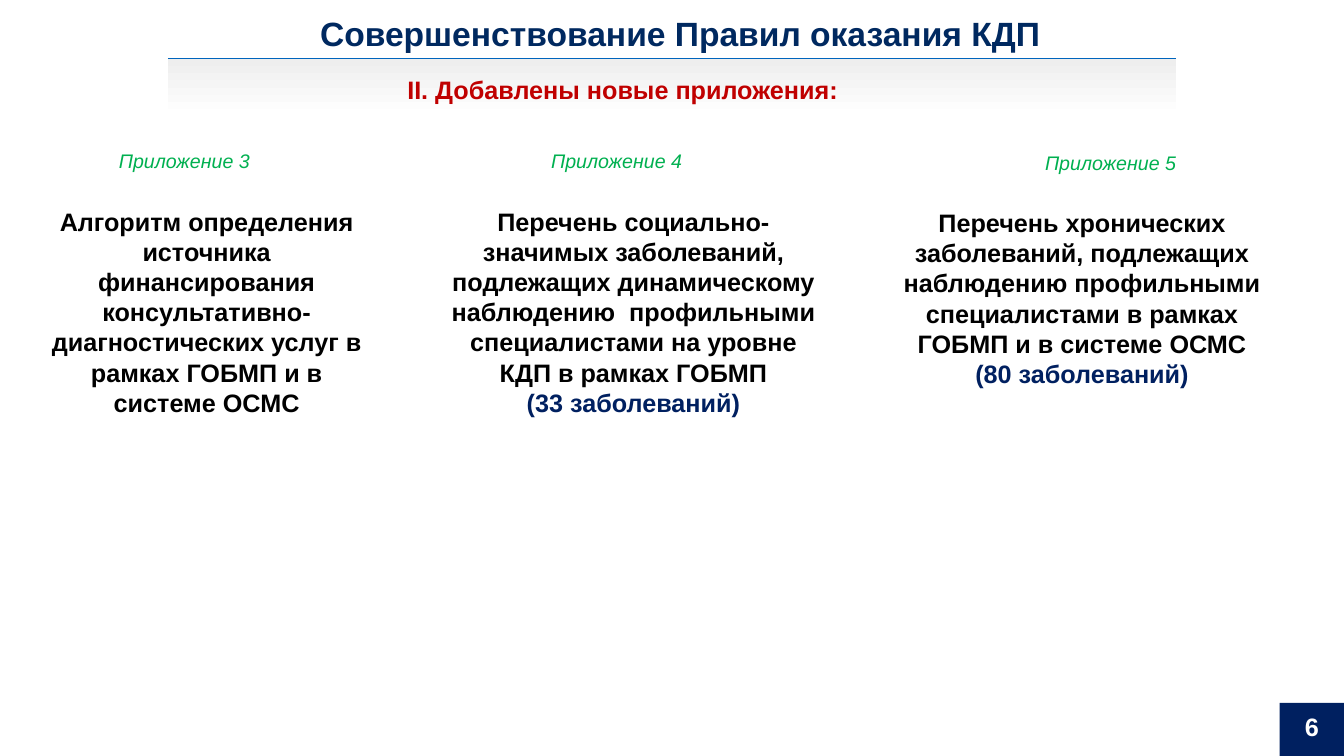
from lxml import etree
from pptx import Presentation
from pptx.dml.color import RGBColor
from pptx.enum.shapes import MSO_CONNECTOR, MSO_SHAPE
from pptx.enum.text import MSO_ANCHOR, MSO_AUTO_SIZE, PP_ALIGN
from pptx.oxml.ns import qn
from pptx.util import Pt

RECTANGLE = MSO_SHAPE.RECTANGLE
STRAIGHT = MSO_CONNECTOR.STRAIGHT
MIDDLE = MSO_ANCHOR.MIDDLE
GROW = MSO_AUTO_SIZE.SHAPE_TO_FIT_TEXT
LEFT = PP_ALIGN.LEFT
CENTER = PP_ALIGN.CENTER

FONT = "Arial"
TITLE_BLUE = RGBColor(0x00, 0x29, 0x60)
NAVY = RGBColor(0x00, 0x20, 0x60)
LINE_BLUE = RGBColor(0x00, 0x65, 0xBD)
RED = RGBColor(0xC0, 0x00, 0x00)
GREEN = RGBColor(0x00, 0xB0, 0x50)
BLACK = RGBColor(0x00, 0x00, 0x00)
WHITE = RGBColor(0xFF, 0xFF, 0xFF)
LIGHT_GRAY = RGBColor(0xEE, 0xEE, 0xEE)

SLIDE_WIDTH, SLIDE_HEIGHT = 960, 540
LABEL_HEIGHT = 24.2
BODY_OFFSET = 40.5
COLUMNS = [
    (24.5, 103, 246.2, 160, 53.3, "Приложение 3",
     "Алгоритм определения источника финансирования консультативно-диагностических "
     "услуг в рамках ГОБМП и в системе ОСМС", None),
    (309.6, 103, 285.8, 160, 77, "Приложение 4",
     "Перечень социально-значимых заболеваний, подлежащих динамическому наблюдению  "
     "профильными специалистами на уровне КДП в рамках ГОБМП", "(33 заболеваний)"),
    (630, 104, 285.8, 138.2, 109.4, "Приложение 5",
     "Перечень хронических заболеваний, подлежащих наблюдению профильными "
     "специалистами в рамках ГОБМП и в системе ОСМС", "(80 заболеваний)"),
]


def format_paragraph(paragraph, size, color, bold=True, italic=False, alignment=CENTER):
    paragraph.alignment = alignment
    for run in paragraph.runs:
        run.font.name = FONT
        run.font.size = Pt(size)
        run.font.bold = bold
        run.font.italic = italic
        run.font.color.rgb = color


def add_text(slide, left, top, width, height, text, size, color, **style):
    shape = slide.shapes.add_textbox(Pt(left), Pt(top), Pt(width), Pt(height))
    text_frame = shape.text_frame
    text_frame.word_wrap = True
    text_frame.auto_size = GROW
    text_frame.text = text
    format_paragraph(text_frame.paragraphs[0], size, color, **style)
    return text_frame


def add_rectangle(slide, left, top, width, height):
    shape = slide.shapes.add_shape(RECTANGLE, Pt(left), Pt(top), Pt(width), Pt(height))
    shape.shadow.inherit = False
    shape.line.fill.background()
    return shape


def add_header(slide, left, top, width, height):
    title = add_text(slide, left - 83.5, top - 32.4, 898.6, 28.8,
                     "Совершенствование Правил оказания КДП", 24, TITLE_BLUE)
    title.margin_left = title.margin_right = 0
    title.margin_top = title.margin_bottom = 0

    band = add_rectangle(slide, left, top, width, height)
    band.fill.gradient()
    band.fill.gradient_angle = 270
    for stop, color in zip(band.fill.gradient_stops, (LIGHT_GRAY, WHITE)):
        stop.color.rgb = color

    rule = slide.shapes.add_connector(STRAIGHT, Pt(left), Pt(top), Pt(left + width), Pt(top))
    rule.line.color.rgb = LINE_BLUE
    rule.line.width = Pt(0.75)
    etree.SubElement(rule._element.spPr, qn("a:effectLst"))

    add_text(slide, left + 131, top + 7.9, 387.4, 28.8,
             "II. Добавлены новые приложения:", 18, RED)


def add_appendix(slide, left, top, width, body_height, label_indent, label, body, count):
    add_text(slide, left + label_indent, top, 153.4, LABEL_HEIGHT, label, 14, GREEN,
             bold=False, italic=True, alignment=LEFT)
    text_frame = add_text(slide, left, top + BODY_OFFSET, width, body_height, body, 18, BLACK)
    if count:
        paragraph = text_frame.add_paragraph()
        paragraph.text = count
        format_paragraph(paragraph, 18, NAVY)


def add_page_number(slide, left, top, width, height):
    badge = add_rectangle(slide, left, top, width, height)
    badge.fill.solid()
    badge.fill.fore_color.rgb = NAVY
    badge.text_frame.vertical_anchor = MIDDLE
    badge.text_frame.text = "6"
    paragraph = badge.text_frame.paragraphs[0]
    paragraph.line_spacing = 0.8
    format_paragraph(paragraph, 18, WHITE)


def main():
    presentation = Presentation()
    presentation.slide_width = Pt(SLIDE_WIDTH)
    presentation.slide_height = Pt(SLIDE_HEIGHT)
    slide = presentation.slides.add_slide(presentation.slide_layouts[6])
    add_header(slide, 120, 41.6, 720, 41.8)
    for column in COLUMNS:
        add_appendix(slide, *column)
    add_page_number(slide, SLIDE_WIDTH - 46, SLIDE_HEIGHT - 38, 46, 38)
    presentation.save("out.pptx")


if __name__ == "__main__":
    main()
